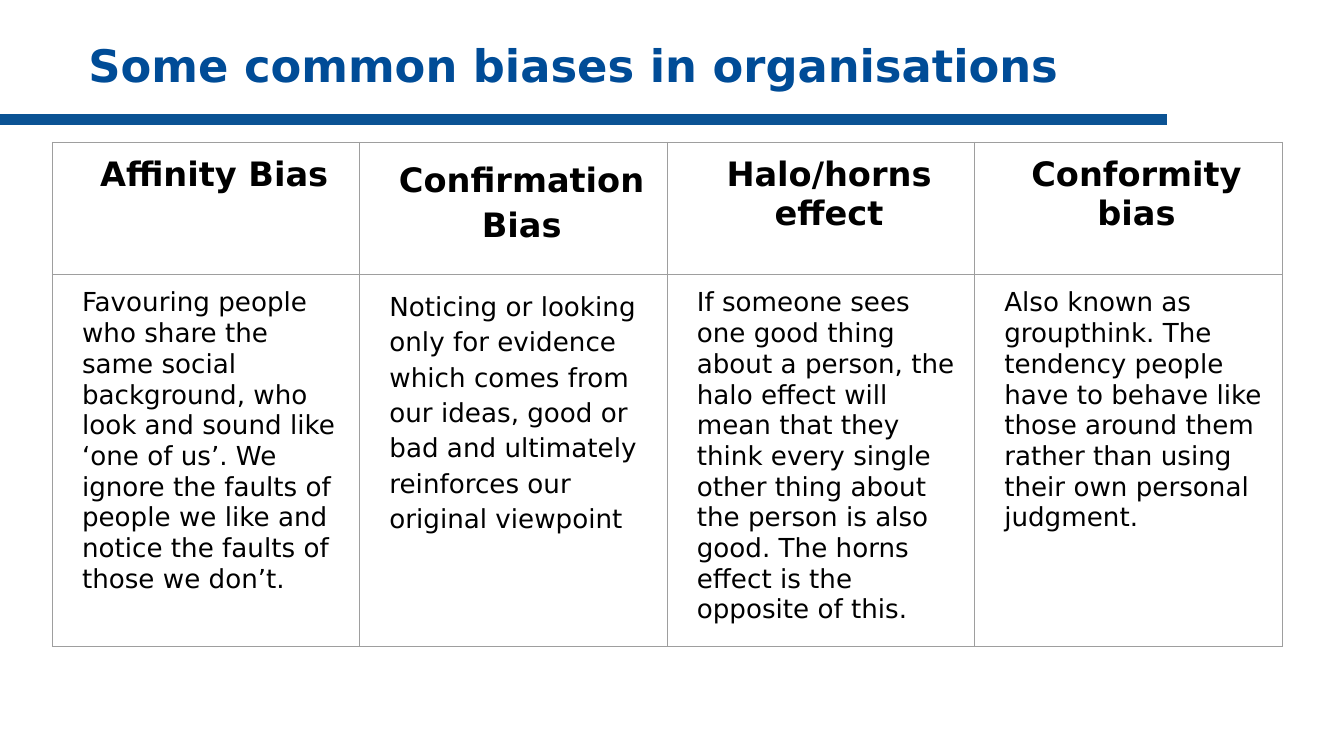
from pptx import Presentation
from pptx.dml.color import RGBColor
from pptx.enum.shapes import MSO_CONNECTOR
from pptx.enum.text import PP_ALIGN, MSO_ANCHOR
from pptx.oxml.ns import qn
from pptx.util import Inches, Pt
from lxml.etree import SubElement

FONT = "DejaVu Sans"
TITLE = "Some common biases in organisations"
BIASES = [
    ("Affinity Bias", 1.0,
     "Favouring people who share the same social background, who look and sound like "
     "‘one of us’. We ignore the faults of people we like and notice the faults of those we don’t."),
    ("Confirmation Bias", 1.15,
     "Noticing or looking only for evidence which comes from our ideas, good or bad "
     "and ultimately reinforces our original viewpoint"),
    ("Halo/horns effect", 1.0,
     "If someone sees one good thing about a person, the halo effect will mean that they "
     "think every single other thing about the person is also good. "
     "The horns effect is the opposite of this."),
    ("Conformity bias", 1.0,
     "Also known as groupthink. The tendency people have to behave like those around them "
     "rather than using their own personal judgment."),
]
SLIDE_WIDTH = 10
TABLE_WIDTH, TABLE_HEIGHT = 9.15, 3.74
ROW_HEIGHTS = [0.98, 2.4]
INSET = Inches(0.1)


def color(value):
    return RGBColor.from_string(value)


def add_run(paragraph, text, size, ink, bold):
    run = paragraph.add_run()
    run.text = text
    run.font.name = FONT
    run.font.size = Pt(size)
    run.font.bold = bold
    run.font.color.rgb = color(ink)


def set_insets(box):
    box.margin_left = box.margin_right = box.margin_top = box.margin_bottom = INSET
    box.vertical_anchor = MSO_ANCHOR.TOP


def add_borders(cell, ink, width):
    properties = cell._tc.get_or_add_tcPr()
    for side in ("lnL", "lnR", "lnT", "lnB"):
        line = SubElement(properties, qn(f"a:{side}"), w=str(Pt(width)))
        fill = SubElement(line, qn("a:solidFill"))
        SubElement(fill, qn("a:srgbClr"), val=ink)


def fill_cell(cell, text, size, bold, align, spacing):
    set_insets(cell)
    add_borders(cell, "9E9E9E", 0.75)
    cell.fill.background()
    paragraph = cell.text_frame.paragraphs[0]
    paragraph.alignment = align
    paragraph.line_spacing = spacing
    properties = paragraph._p.get_or_add_pPr()
    properties.set("marL", str(Inches(0.12)))
    properties.set("indent", "0")
    add_run(paragraph, text, size, "000000", bold)


def add_title(slide):
    shape = slide.shapes.add_textbox(Inches(0.56), Inches(0.18), Inches(9.32), Inches(0.71))
    frame = shape.text_frame
    frame.word_wrap = True
    set_insets(frame)
    add_run(frame.paragraphs[0], TITLE, 24, "004C97", True)


def add_rule(slide):
    rule = slide.shapes.add_connector(
        MSO_CONNECTOR.STRAIGHT, 0, Inches(0.89), Inches(8.68), Inches(0.89))
    rule.line.color.rgb = color("0B5394")
    rule.line.width = Pt(6)
    SubElement(rule._element.spPr, qn("a:effectLst"))


def add_bias_table(slide):
    shape = slide.shapes.add_table(
        len(ROW_HEIGHTS), len(BIASES), Inches(0.39), Inches(1.06),
        Inches(TABLE_WIDTH), Inches(TABLE_HEIGHT))
    table = shape.table
    table.first_row = table.horz_banding = False
    for row, height in zip(table.rows, ROW_HEIGHTS):
        row.height = Inches(height)
    shape.height = Inches(TABLE_HEIGHT)
    for index, (name, spacing, description) in enumerate(BIASES):
        table.columns[index].width = Inches(TABLE_WIDTH / len(BIASES))
        fill_cell(table.cell(0, index), name, 18, True, PP_ALIGN.CENTER, spacing)
        fill_cell(table.cell(1, index), description, 14, False, PP_ALIGN.LEFT, spacing)


def main():
    """Build the slide on common biases and save it."""
    presentation = Presentation()
    presentation.slide_width = Inches(SLIDE_WIDTH)
    presentation.slide_height = Inches(SLIDE_WIDTH * 9 / 16)
    slide = presentation.slides.add_slide(presentation.slide_layouts[6])
    add_rule(slide)
    add_title(slide)
    add_bias_table(slide)
    presentation.save("out.pptx")


if __name__ == "__main__":
    main()
